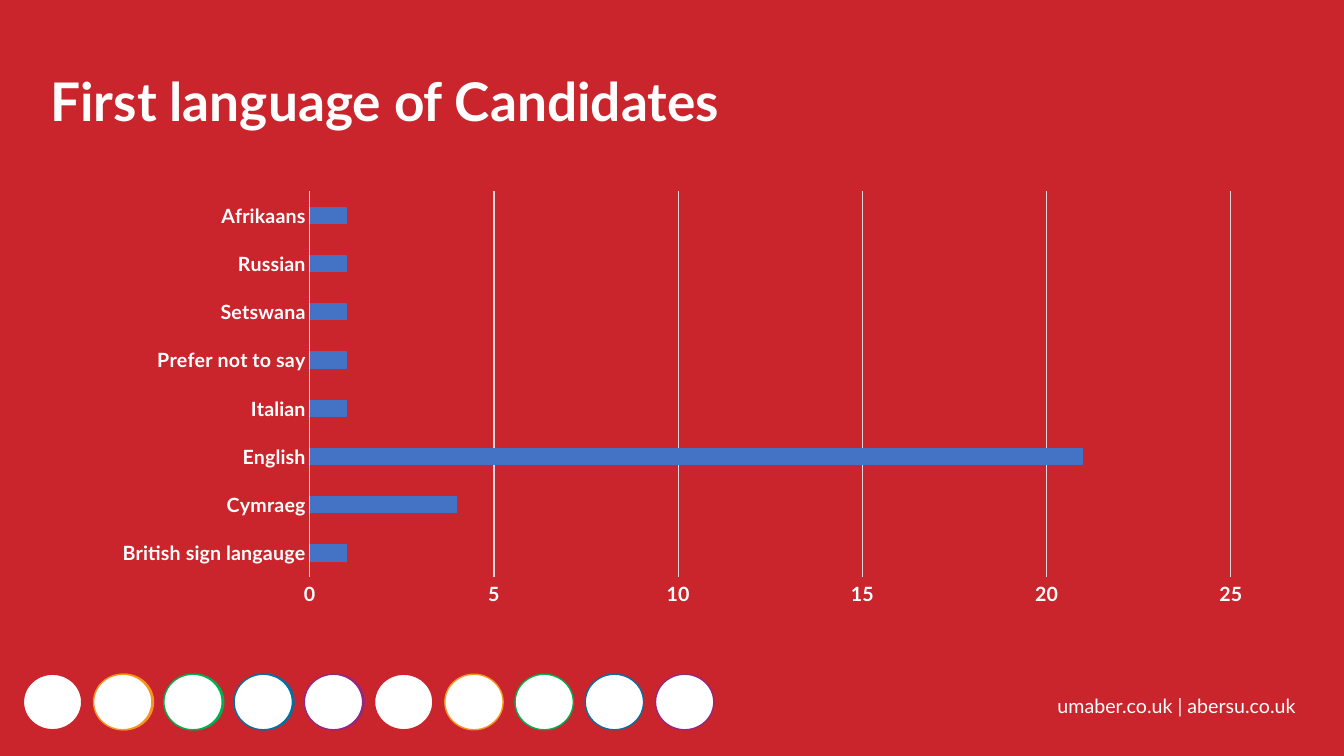
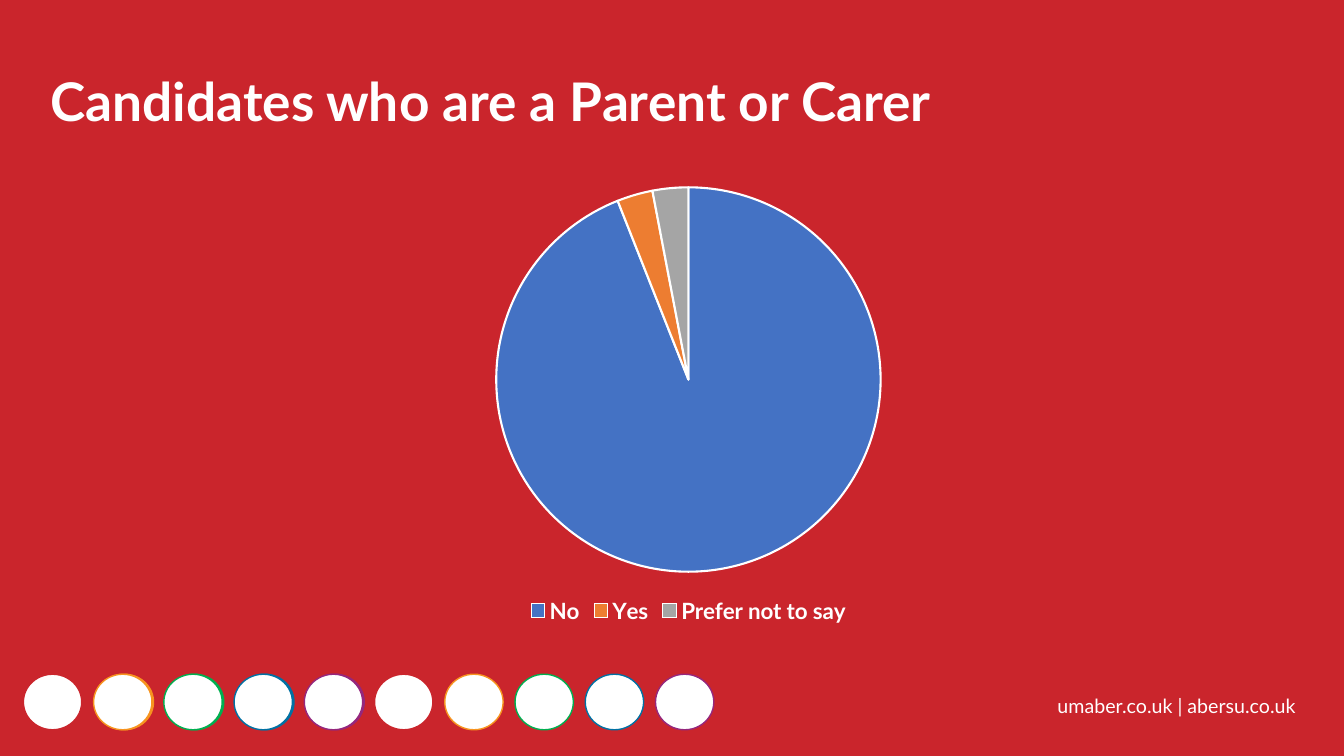
from pptx import Presentation
from pptx.chart.data import CategoryChartData
from pptx.dml.color import RGBColor
from pptx.enum.chart import XL_CHART_TYPE, XL_LEGEND_POSITION, XL_TICK_MARK
from pptx.enum.shapes import MSO_SHAPE
from pptx.util import Cm, Pt

BAR = XL_CHART_TYPE.BAR_CLUSTERED
PIE = XL_CHART_TYPE.PIE
BOTTOM = XL_LEGEND_POSITION.BOTTOM
NO_TICK = XL_TICK_MARK.NONE
OVAL = MSO_SHAPE.OVAL

FONT = "Lato"
RED, WHITE, GRID = "CA252C", "FFFFFF", "D9D9D9"
RING_COLORS = [RED, "F7941F", "00AF50", "0171A3", "95277D"]
BLUE, ORANGE, GRAY = "4472C4", "ED7D31", "A5A5A5"


def rgb(value):
    return RGBColor.from_string(value)


class Deck:
    def __init__(self):
        self.prs = Presentation()
        self.prs.slide_width = Cm(33.87)
        self.prs.slide_height = Cm(19.05)
        self.s = None

    def slide(self, title):
        self.s = self.prs.slides.add_slide(self.prs.slide_layouts[6])
        fill = self.s.background.fill
        fill.solid()
        fill.fore_color.rgb = rgb(RED)
        self.rings()
        self.text(26.4, 17.37, 7.11, 0.86, "umaber.co.uk | abersu.co.uk", 14)
        self.text(1.02, 1.78, 29, 2.24, title, 38, bold=True, spacing=0.9)

    def style_font(self, font, size, bold):
        font.name = FONT
        font.size = Pt(size)
        font.bold = bold
        font.color.rgb = rgb(WHITE)

    def text(self, x, y, w, h, text, size, bold=False, spacing=1.0):
        tf = self.s.shapes.add_textbox(Cm(x), Cm(y), Cm(w), Cm(h)).text_frame
        tf.word_wrap = True
        p = tf.paragraphs[0]
        p.line_spacing = spacing
        r = p.add_run()
        r.text = text
        self.style_font(r.font, size, bold)

    def circle(self, x, fill, line):
        sp = self.s.shapes.add_shape(OVAL, Cm(x), Cm(16.99), Cm(1.47), Cm(1.4))
        sp.shadow.inherit = False
        sp.fill.solid()
        sp.fill.fore_color.rgb = rgb(fill)
        sp.line.color.rgb = rgb(line)
        sp.line.width = Pt(1)

    def rings(self):
        left, pitch = 0.59, 1.77
        for i, color in enumerate(RING_COLORS):
            self.circle(left + 0.04 + i * pitch, color, color)
        for i, color in enumerate(RING_COLORS * 2):
            self.circle(left + i * pitch, WHITE, color)

    def chart(self, kind, x, y, w, h, values, size):
        data = CategoryChartData()
        data.categories = list(values)
        data.add_series("Series 1", list(values.values()))
        frame = self.s.shapes.add_chart(kind, Cm(x), Cm(y), Cm(w), Cm(h), data)
        chart = frame.chart
        chart.has_title = False
        chart.has_legend = False
        self.style_font(chart.font, size, True)
        return chart

    def bar_chart(self, x, y, w, h, values, color, top, step):
        size = 14
        chart = self.chart(BAR, x, y, w, h, values, size)
        plot = chart.plots[0]
        plot.vary_by_categories = False
        plot.gap_width = 182
        fill = plot.series[0].format.fill
        fill.solid()
        fill.fore_color.rgb = rgb(color)
        cat, val = chart.category_axis, chart.value_axis
        for axis in (cat, val):
            axis.major_tick_mark = axis.minor_tick_mark = NO_TICK
            self.style_font(axis.tick_labels.font, size, True)
        val.minimum_scale, val.maximum_scale, val.major_unit = 0, top, step
        val.has_major_gridlines = True
        val.format.line.fill.background()
        for line in (cat.format.line, val.major_gridlines.format.line):
            line.color.rgb = rgb(GRID)
            line.width = Pt(0.75)

    def pie_chart(self, x, y, w, h, values, colors):
        size = 16
        chart = self.chart(PIE, x, y, w, h, values, size)
        chart.has_legend = True
        chart.legend.position = BOTTOM
        chart.legend.include_in_layout = False
        self.style_font(chart.legend.font, size, True)
        plot = chart.plots[0]
        plot.vary_by_categories = True
        for i, color in enumerate(colors):
            fmt = plot.series[0].points[i].format
            fmt.fill.solid()
            fmt.fill.fore_color.rgb = rgb(color)
            fmt.line.color.rgb = rgb(WHITE)
            fmt.line.width = Pt(1.5)


def main():
    deck = Deck()

    deck.slide("First language of Candidates")
    languages = {
        "British sign langauge": 1,
        "Cymraeg": 4,
        "English": 21,
        "Italian": 1,
        "Prefer not to say": 1,
        "Setswana": 1,
        "Russian": 1,
        "Afrikaans": 1,
    }
    deck.bar_chart(2.5, 4.6, 29.4, 10.87, languages, BLUE, top=25, step=5)

    deck.slide("Candidates who are a Parent or Carer")
    carers = {"No": 94, "Yes": 3, "Prefer not to say": 3}
    deck.pie_chart(2.5, 4.37, 29.7, 11.46, carers, [BLUE, ORANGE, GRAY])

    deck.prs.save("out.pptx")


if __name__ == "__main__":
    main()
